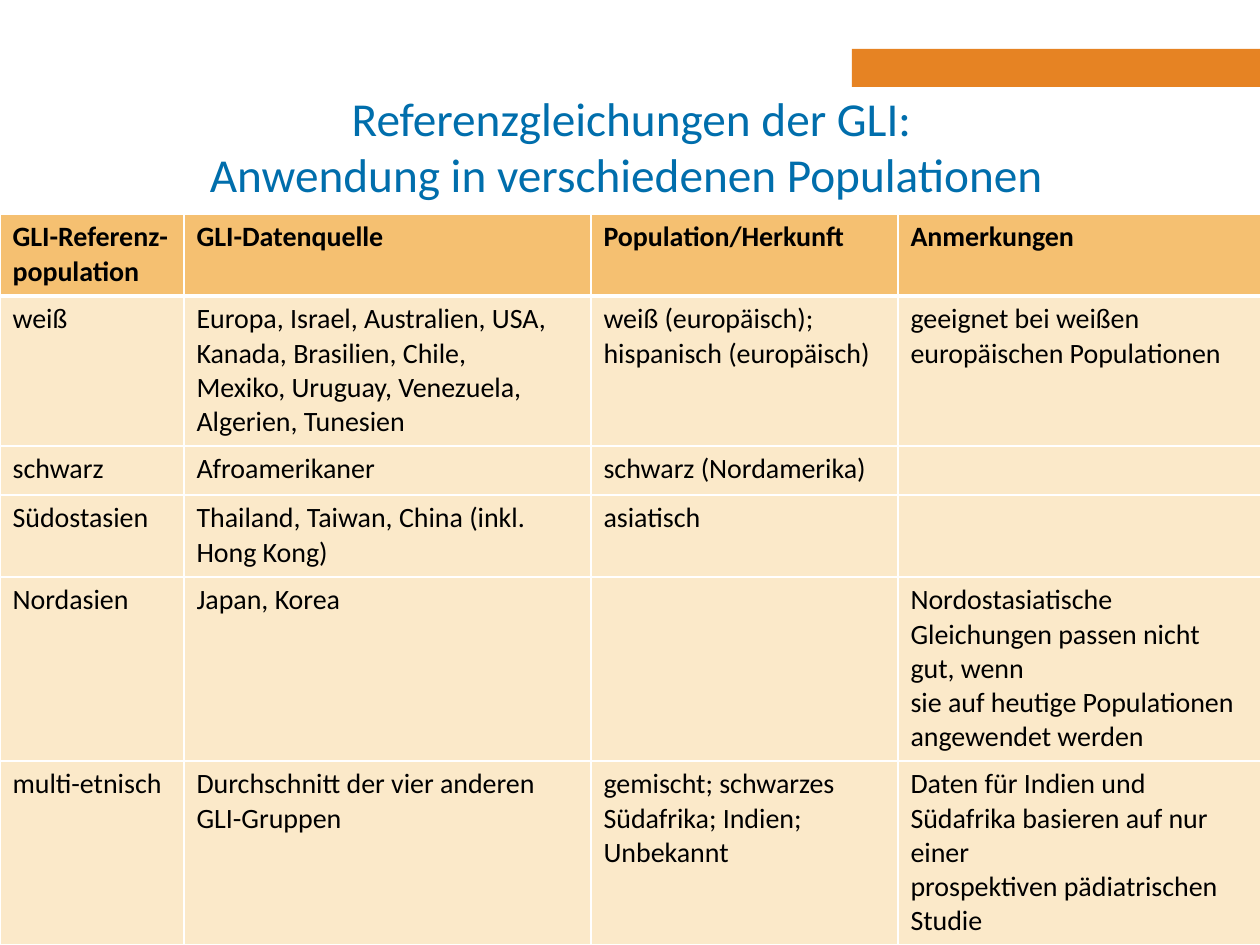
import lxml.etree
import pptx
import pptx.dml.color
import pptx.enum.text
import pptx.oxml.ns
import pptx.util
from dataclasses import dataclass

PX_PER_INCH = 126


@dataclass(frozen=True)
class Theme:
    font: str = "Calibri"
    title_size: int = 27
    cell_size: int = 16
    title: str = "006EAC"
    text: str = "000000"
    accent: str = "E68323"
    header_fill: str = "F5C071"
    body_fill: str = "FBE9C9"
    rule: str = "FFFFFF"
    thin_rule: int = 1
    thick_rule: int = 3


THEME = Theme()

TITLE = "Referenzgleichungen der GLI:\vAnwendung in verschiedenen Populationen "
COLUMN_WIDTHS = [184, 407, 307, 363]
ROW_HEIGHTS = [82, 150, 49, 82, 184, 184]

# Each newline starts a new paragraph inside its cell
POPULATIONS = [
    ["GLI-Referenz-population", "GLI-Datenquelle", "Population/Herkunft", "Anmerkungen"],
    ["weiß",
     "Europa, Israel, Australien, USA, Kanada, Brasilien, Chile,\n"
     "Mexiko, Uruguay, Venezuela, Algerien, Tunesien",
     "weiß (europäisch);\nhispanisch (europäisch)",
     "geeignet bei weißen europäischen Populationen"],
    ["schwarz", "Afroamerikaner", "schwarz (Nordamerika)", ""],
    ["Südostasien", "Thailand, Taiwan, China (inkl. Hong Kong)", "asiatisch", ""],
    ["Nordasien", "Japan, Korea", "",
     "Nordostasiatische Gleichungen passen nicht gut, wenn\n"
     "sie auf heutige Populationen angewendet werden"],
    ["multi-etnisch", "Durchschnitt der vier anderen GLI-Gruppen",
     "gemischt; schwarzes\nSüdafrika; Indien;\nUnbekannt",
     "Daten für Indien und Südafrika basieren auf nur einer\n"
     "prospektiven pädiatrischen Studie"],
]


def px(length):
    return pptx.util.Emu(round(length * 914400 / PX_PER_INCH))


def rgb(value):
    return pptx.dml.color.RGBColor.from_string(value)


def write_text(frame, text, *, size, color, bold=False,
               align=pptx.enum.text.PP_ALIGN.LEFT):
    frame.text = text
    for paragraph in frame.paragraphs:
        paragraph.alignment = align
        for run in paragraph.runs:
            run.font.name = THEME.font
            run.font.size = pptx.util.Pt(size)
            run.font.bold = bold
            run.font.color.rgb = rgb(color)
        if not paragraph.runs:
            # An empty cell keeps the height of one line of this size
            lxml.etree.SubElement(paragraph._p, pptx.oxml.ns.qn("a:endParaRPr"),
                                  sz=str(size * 100))


def rule_cell(cell, **widths):
    """Draw the cell's borders; this has to come before its fill."""
    properties = cell._tc.get_or_add_tcPr()
    for side in "LRTB":
        width = widths.get(side, THEME.thin_rule)
        line = lxml.etree.SubElement(properties, pptx.oxml.ns.qn(f"a:ln{side}"),
                                     w=str(pptx.util.Pt(width)))
        fill = lxml.etree.SubElement(line, pptx.oxml.ns.qn("a:solidFill"))
        lxml.etree.SubElement(fill, pptx.oxml.ns.qn("a:srgbClr"), val=THEME.rule)


def add_accent_bar(slide, left, top, width, height):
    bar = slide.shapes.add_shape(pptx.enum.shapes.MSO_SHAPE.RECTANGLE,
                                 px(left), px(top), px(width), px(height))
    bar.shadow.inherit = False
    bar.fill.solid()
    bar.fill.fore_color.rgb = rgb(THEME.accent)
    bar.line.fill.background()


def place_title(slide, left, top, width, height):
    title = slide.shapes.title
    title.left, title.top = px(left), px(top)
    title.width, title.height = px(width), px(height)
    frame = title.text_frame
    frame.word_wrap = True
    frame.auto_size = pptx.enum.text.MSO_AUTO_SIZE.NONE
    frame.vertical_anchor = pptx.enum.text.MSO_ANCHOR.MIDDLE
    write_text(frame, TITLE, size=THEME.title_size, color=THEME.title,
               align=pptx.enum.text.PP_ALIGN.CENTER)


def add_population_table(slide, left, top):
    table = slide.shapes.add_table(
        len(ROW_HEIGHTS), len(COLUMN_WIDTHS), px(left), px(top),
        px(sum(COLUMN_WIDTHS)), px(sum(ROW_HEIGHTS))).table
    table.horz_banding = False
    for column, width in zip(table.columns, COLUMN_WIDTHS):
        column.width = px(width)
    for row, height in zip(table.rows, ROW_HEIGHTS):
        row.height = px(height)

    for row_index, entries in enumerate(POPULATIONS):
        is_header = row_index == 0
        # The thick rule lies between the header and the first body row
        thick = {0: {"B": THEME.thick_rule}, 1: {"T": THEME.thick_rule}}
        for column_index, entry in enumerate(entries):
            cell = table.cell(row_index, column_index)
            rule_cell(cell, **thick.get(row_index, {}))
            cell.fill.solid()
            cell.fill.fore_color.rgb = rgb(
                THEME.header_fill if is_header else THEME.body_fill)
            write_text(cell.text_frame, entry, size=THEME.cell_size,
                       color=THEME.text, bold=is_header)


def main():
    presentation = pptx.Presentation()
    presentation.slide_width, presentation.slide_height = px(1260), px(945)
    title_only = presentation.slide_layouts[5]
    slide = presentation.slides.add_slide(title_only)

    add_accent_bar(slide, 852, 49, 408, 38)
    place_title(slide, 186, 87, 891, 117)
    add_population_table(slide, 0, 214)
    presentation.save("out.pptx")


if __name__ == "__main__":
    import pptx.enum.shapes
    main()
